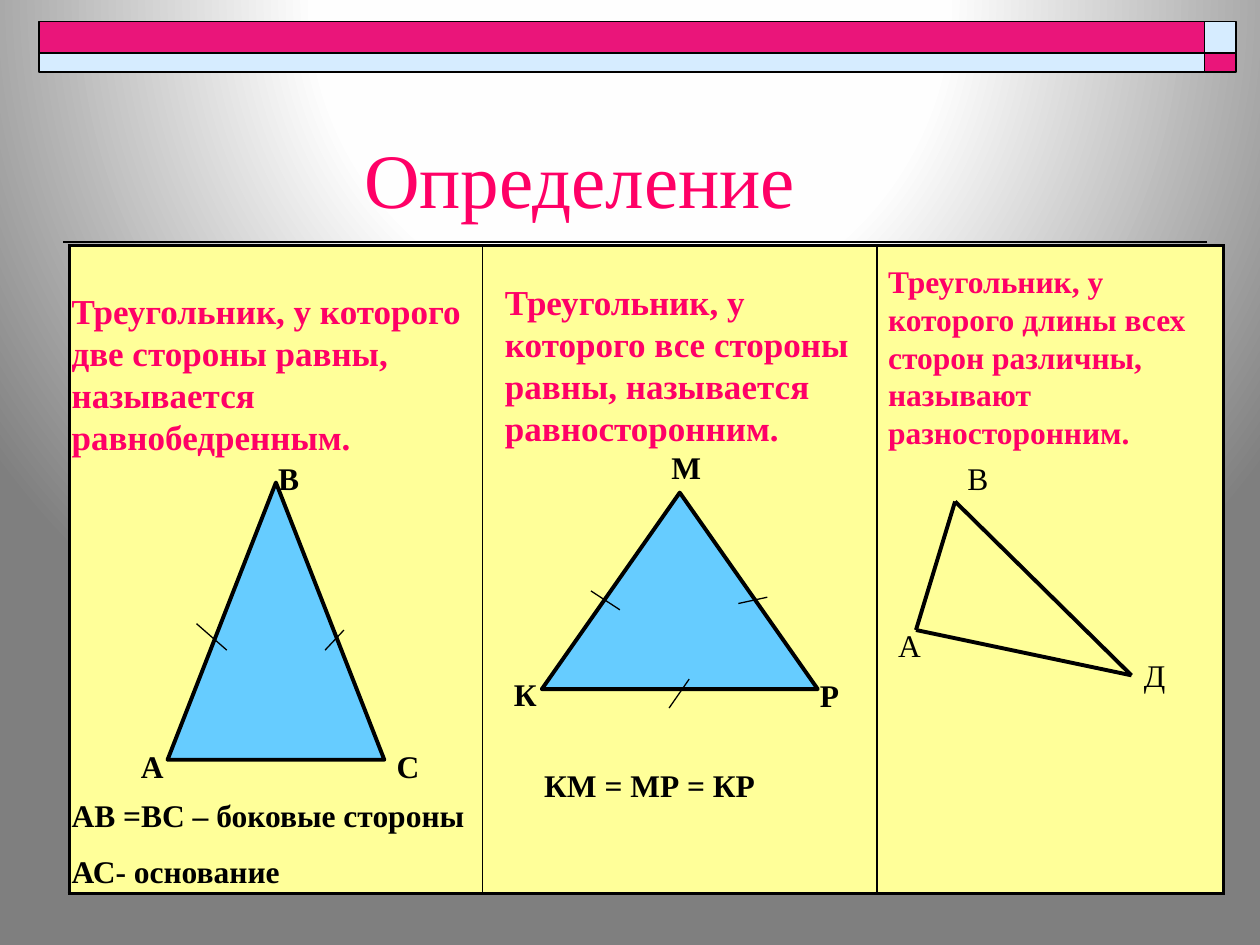
from itertools import accumulate, combinations

from lxml.etree import SubElement
from pptx import Presentation
from pptx.dml.color import RGBColor
from pptx.enum.shapes import MSO_CONNECTOR, MSO_SHAPE
from pptx.enum.text import MSO_ANCHOR
from pptx.oxml import parse_xml
from pptx.oxml.ns import nsdecls, qn
from pptx.util import Inches, Pt

BLACK = RGBColor(0x00, 0x00, 0x00)
PINK = RGBColor(0xFF, 0x00, 0x66)
MAGENTA = RGBColor(0xEA, 0x15, 0x7A)
PALE_BLUE = RGBColor(0xD6, 0xEC, 0xFF)
SKY_BLUE = RGBColor(0x66, 0xCC, 0xFF)
YELLOW = RGBColor(0xFF, 0xFF, 0x99)
FONT = "Times New Roman"


def add_text(slide, origin, box, *lines, size=18, color=BLACK, bold=True,
             anchor=MSO_ANCHOR.TOP, indent=0.1):
    left, top, width, height = box
    label = slide.shapes.add_textbox(Inches(origin[0] + left), Inches(origin[1] + top),
                                     Inches(width), Inches(height))
    frame = label.text_frame
    frame.word_wrap = True
    frame.vertical_anchor = anchor
    frame.margin_left = Inches(indent)
    for index, line in enumerate(lines):
        paragraph = frame.add_paragraph() if index else frame.paragraphs[0]
        if index:
            paragraph.space_before = Pt(10)
        run = paragraph.add_run()
        run.text = line
        run.font.name = FONT
        run.font.size = Pt(size)
        run.font.bold = bold
        run.font.color.rgb = color


def add_figure(slide, kind, origin, box, fill, weight):
    left, top, width, height = box
    figure = slide.shapes.add_shape(kind, Inches(origin[0] + left), Inches(origin[1] + top),
                                    Inches(width), Inches(height))
    figure.shadow.inherit = False
    figure.fill.solid()
    figure.fill.fore_color.rgb = fill
    figure.line.color.rgb = BLACK
    figure.line.width = Pt(weight)


def add_line(slide, origin, start, end, weight=0.75):
    x, y = origin
    line = slide.shapes.add_connector(MSO_CONNECTOR.STRAIGHT,
                                      Inches(x + start[0]), Inches(y + start[1]),
                                      Inches(x + end[0]), Inches(y + end[1]))
    line.line.color.rgb = BLACK
    line.line.width = Pt(weight)
    SubElement(line.element.spPr, qn("a:effectLst"))


def set_background(slide):
    slide.background.fill.solid()
    properties = slide.background._cSld.bg.bgPr
    stops = "".join(f'<a:gs pos="{position}"><a:srgbClr val="{color}"/></a:gs>'
                    for position, color in ((0, "FFFFFF"), (40000, "FEFEFE"), (100000, "7F7F7F")))
    gradient = parse_xml(
        f'<a:gradFill {nsdecls("a")} rotWithShape="1"><a:gsLst>{stops}</a:gsLst>'
        '<a:path path="circle"><a:fillToRect l="50000" t="-80000" r="50000" b="180000"/>'
        '</a:path></a:gradFill>')
    properties.replace(properties[0], gradient)


def add_banner(slide, origin):
    long_side, short_side, lower = 9.25, 0.25, 0.15
    for box, fill in (((long_side, 0, short_side, short_side), PALE_BLUE),
                      ((0, 0, long_side, short_side), MAGENTA),
                      ((0, short_side, long_side, lower), PALE_BLUE),
                      ((long_side, short_side, short_side, lower), MAGENTA)):
        add_figure(slide, MSO_SHAPE.RECTANGLE, origin, box, fill, 1)


def add_title(slide, origin):
    add_text(slide, origin, (0, 0, 9, 1.25), "Определение", size=44, color=PINK,
             bold=False, anchor=MSO_ANCHOR.BOTTOM, indent=2.39)
    add_line(slide, origin, (9.08, 1.34), (0, 1.34), 1)


def set_borders(cell, **weights):
    properties = cell._tc.get_or_add_tcPr()
    for index, (side, weight) in enumerate(weights.items()):
        properties.insert(index, parse_xml(
            f'<a:{side} {nsdecls("a")} w="{Pt(weight)}"><a:solidFill>'
            f'<a:srgbClr val="{BLACK}"/></a:solidFill></a:{side}>'))


def add_definition_table(slide, origin, widths, height):
    table = slide.shapes.add_table(1, len(widths), Inches(origin[0]), Inches(origin[1]),
                                   Inches(sum(widths)), Inches(height)).table
    table.first_row = table.horz_banding = False
    table.rows[0].height = Inches(height)
    last = len(widths) - 1
    for index, width in enumerate(widths):
        table.columns[index].width = Inches(width)
        cell = table.cell(0, index)
        cell.fill.solid()
        cell.fill.fore_color.rgb = YELLOW
        set_borders(cell, lnL=1 if index else 2.25, lnR=2.25 if index == last else 1,
                    lnT=2.25, lnB=2.25)


def add_isosceles(slide, origin):
    add_text(slide, origin, (-0.08, 0.3, 3.67, 1.45),
             "Треугольник, у которого две стороны равны, называется равнобедренным.",
             size=20, color=PINK)
    add_figure(slide, MSO_SHAPE.ISOSCELES_TRIANGLE, origin, (0.78, 1.88, 1.72, 2.2), SKY_BLUE, 2.25)
    for vertex, left, top in (("А", 0.47, 3.93), ("В", 1.56, 1.64), ("С", 2.5, 3.93)):
        add_text(slide, origin, (left, top, 0.47, 0.4), vertex)
    add_line(slide, origin, (1.25, 3.21), (1.01, 3))
    add_line(slide, origin, (2.03, 3.21), (2.18, 3.05))
    add_text(slide, origin, (-0.08, 4.32, 3.98, 0.85),
             "АВ =ВС – боковые стороны", "АС- основание")


def add_equilateral(slide, origin):
    add_text(slide, origin, (0.08, 0.23, 3.2, 1.45),
             "Треугольник, у которого все стороны равны, называется равносторонним.",
             size=20, color=PINK)
    add_figure(slide, MSO_SHAPE.ISOSCELES_TRIANGLE, origin, (0.47, 1.96, 2.19, 1.56), SKY_BLUE, 2.25)
    for vertex, left, top in (("К", 0.15, 3.36), ("М", 1.4, 1.56), ("Р", 2.58, 3.37)):
        add_text(slide, origin, (left, top, 0.47, 0.4), vertex)
    for start, end in (((2.03, 2.84), (2.26, 2.79)),
                       ((0.86, 2.74), (1.09, 2.89)),
                       ((1.64, 3.44), (1.48, 3.67))):
        add_line(slide, origin, start, end)
    add_text(slide, origin, (0.39, 4.08, 1.88, 0.4), "КМ = МР = КР")


def add_scalene(slide, origin):
    add_text(slide, origin, (-0.01, 0.08, 2.73, 1.62),
             "Треугольник, у которого длины всех сторон различны, называют разносторонним.",
             color=PINK)
    corners = (0.31, 3.05), (0.62, 2.03), (2.02, 3.41)
    for start, end in combinations(corners, 2):
        add_line(slide, origin, start, end, 2.25)
    for vertex, left, top in (("А", 0.07, 2.97), ("В", 0.62, 1.64), ("Д", 2.02, 3.21)):
        add_text(slide, origin, (left, top, 0.47, 0.4), vertex, bold=False)


def main():
    presentation = Presentation()
    presentation.slide_width = Inches(10)
    presentation.slide_height = Inches(7.5)
    slide = presentation.slides.add_slide(presentation.slide_layouts[6])
    set_background(slide)
    add_banner(slide, (0.31, 0.17))
    add_title(slide, (0.5, 0.58))
    left, top = 0.55, 1.95
    widths = 3.28, 3.13, 2.75
    add_definition_table(slide, (left, top), widths, 5.14)
    column_lefts = accumulate(widths[:-1], initial=left)
    for add_column, column_left in zip((add_isosceles, add_equilateral, add_scalene), column_lefts):
        add_column(slide, (column_left, top))
    presentation.save("out.pptx")


if __name__ == "__main__":
    main()
